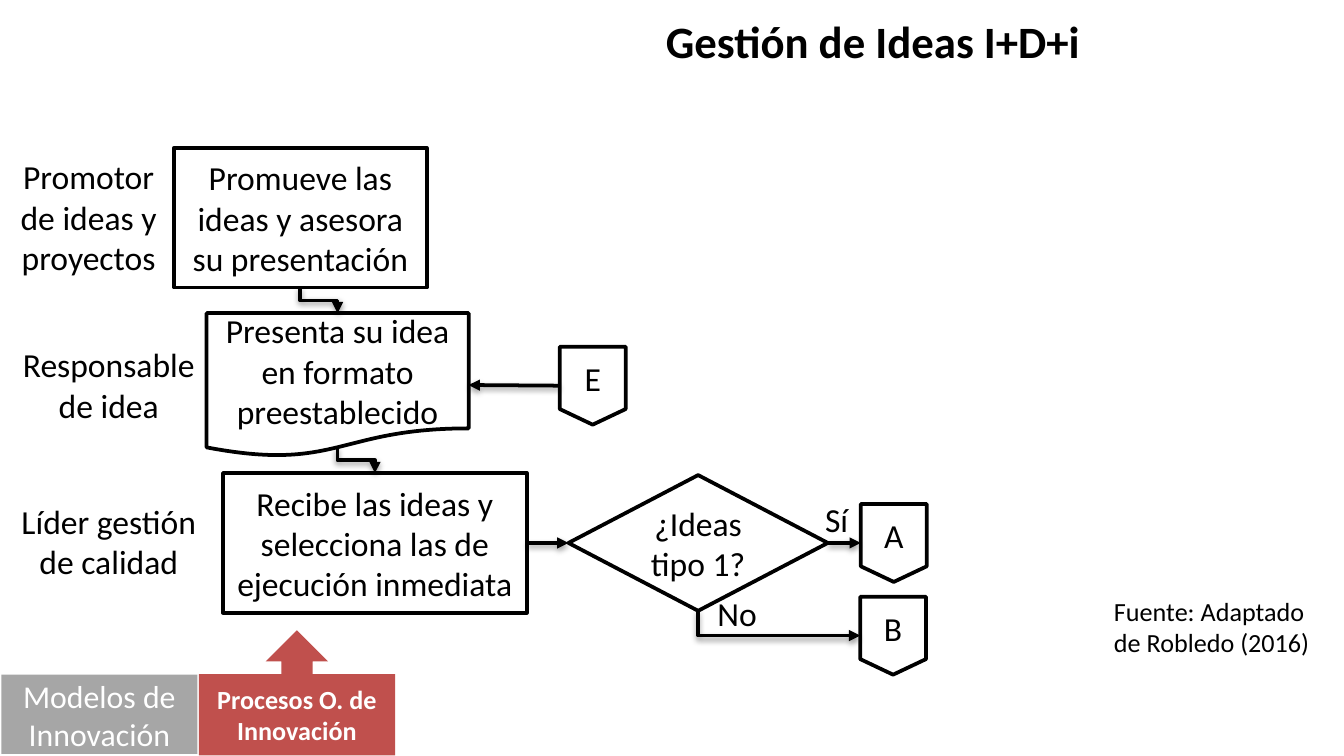
"""Build the flowchart slide on the management of R&D ideas."""
from dataclasses import dataclass
from typing import Optional

from lxml import etree
from pptx import Presentation
from pptx import util as u
from pptx.dml.color import RGBColor
from pptx.enum import shapes, text
from pptx.oxml import parse_xml
from pptx.oxml.ns import nsdecls, qn

FONT = "Calibri"
COLORS = {"ink": "000000", "paper": "FFFFFF", "gray": "A6A6A6", "red": "C0504D"}
WIDTH = u.Inches(10)
HEIGHT = WIDTH * 9 // 16
CELL = WIDTH // 100
TOP, LEFT, BOTTOM, RIGHT = range(4)
KIND = shapes.MSO_SHAPE
ALIGN = text.PP_ALIGN
SHADOW = (
    f'<a:effectLst {nsdecls("a")}><a:outerShdw blurRad="40000" dist="20000" dir="5400000" '
    'rotWithShape="0"><a:srgbClr val="000000"><a:alpha val="38000"/></a:srgbClr>'
    "</a:outerShdw></a:effectLst>"
)


@dataclass(frozen=True)
class Box:
    """A rectangle in grid columns and rows."""

    column: float
    row: float
    columns: float
    rows: float

    def lengths(self) -> tuple[int, ...]:
        return tuple(round(n * CELL) for n in (self.column, self.row, self.columns, self.rows))


@dataclass(frozen=True)
class Label:
    """A plain text box."""

    words: str
    box: Box
    size: int = 18
    align: ALIGN = ALIGN.CENTER
    wrap: bool = True


@dataclass(frozen=True)
class Node:
    """A filled shape with centred text."""

    words: str
    box: Box
    kind: KIND = KIND.RECTANGLE
    fill: str = "paper"
    ink: str = "ink"
    size: int = 18
    bold: bool = False
    outline: bool = True


@dataclass(frozen=True)
class Link:
    """An arrow between connection sites; preset names a downward elbow."""

    start: str
    end: str
    start_site: int = RIGHT
    end_site: int = LEFT
    preset: Optional[str] = None
    lift: float = 0


def page_mark(words: str, column: float, row: float) -> Node:
    """Describe an off-page connector."""
    return Node(words, Box(column, row, 4.9, 5.8), KIND.FLOWCHART_OFFPAGE_CONNECTOR)


LABELS = [
    Label("Fuente: Adaptado de Robledo (2016)", Box(81.9, 43.8, 18.2, 5.7), 14, ALIGN.LEFT),
    Label("Promotor de ideas y proyectos", Box(0.1, 11.13, 13, 10.1)),
    Label("Responsable de idea", Box(0.1, 25.13, 16, 7.1)),
    Label("Líder gestión de calidad", Box(0.1, 36.75, 16, 7.1)),
    Label("Sí", Box(60.4, 36.6, 3.8, 4), align=ALIGN.LEFT, wrap=False),
    Label("No", Box(52.4, 43.65, 5, 4), align=ALIGN.LEFT, wrap=False),
]
NODES = {
    "promote": Node("Promueve las ideas y asesora su presentación", Box(12.95, 11, 18.8, 10.4)),
    "present": Node("Presenta su idea en formato preestablecido",
                    Box(15.37, 23.3, 19.5, 10.7), KIND.FLOWCHART_DOCUMENT),
    "select": Node("Recibe las ideas y selecciona las de ejecución inmediata",
                   Box(16.6, 35.2, 22.6, 10.4)),
    "decide": Node("¿Ideas tipo 1?", Box(42.3, 35.35, 19.3, 10.1), KIND.FLOWCHART_DECISION),
    "A": page_mark("A", 64.05, 37.5),
    "B": page_mark("B", 64, 44.4),
    "E": page_mark("E", 41.65, 25.8),
    "models": Node("Modelos de Innovación", Box(0.1, 50.2, 14.6, 5.9),
                   fill="gray", ink="paper", size=17, outline=False),
    "processes": Node("Procesos O. de Innovación", Box(14.8, 46.9, 14.6, 9.3),
                      KIND.UP_ARROW_CALLOUT, "red", "paper", 14, True, False),
}
LINKS = [
    Link("promote", "present", BOTTOM, TOP, "bentConnector3"),
    Link("present", "select", BOTTOM, TOP, "bentConnector3", lift=0.7),
    Link("select", "decide"),
    Link("decide", "A"),
    Link("decide", "B", BOTTOM, LEFT, "bentConnector2"),
    Link("E", "present", LEFT, RIGHT),
]


def write(shape, words: str, size: int, ink: str = "ink", bold: bool = False,
          align: ALIGN = ALIGN.CENTER) -> None:
    """Put one formatted paragraph in a shape."""
    shape.text_frame.text = words
    paragraph = shape.text_frame.paragraphs[0]
    paragraph.alignment = align
    paragraph.font.name = FONT
    paragraph.font.size = u.Pt(size)
    paragraph.font.bold = bold
    paragraph.font.color.rgb = RGBColor.from_string(COLORS[ink])


def draw_title(slide, words: str, box: Box) -> None:
    """Place and format the title placeholder."""
    title = slide.shapes.title
    title.left, title.top, title.width, title.height = box.lengths()
    write(title, words, 24, bold=True)
    title.text_frame.vertical_anchor = text.MSO_ANCHOR.TOP
    title.text_frame.auto_size = text.MSO_AUTO_SIZE.SHAPE_TO_FIT_TEXT


def draw_label(slide, label: Label) -> None:
    """Draw a text box."""
    shape = slide.shapes.add_textbox(*label.box.lengths())
    write(shape, label.words, label.size, align=label.align)
    shape.text_frame.word_wrap = label.wrap
    shape.text_frame.auto_size = text.MSO_AUTO_SIZE.SHAPE_TO_FIT_TEXT


def draw_node(slide, node: Node):
    """Draw a filled shape and return it."""
    shape = slide.shapes.add_shape(node.kind, *node.box.lengths())
    shape.shadow.inherit = False
    shape.fill.solid()
    shape.fill.fore_color.rgb = RGBColor.from_string(COLORS[node.fill])
    if node.outline:
        shape.line.color.rgb = RGBColor.from_string(COLORS["ink"])
        shape.line.width = u.Pt(2)
    else:
        shape.line.fill.background()
    write(shape, node.words, node.size, node.ink, node.bold)
    shape.text_frame.vertical_anchor = text.MSO_ANCHOR.MIDDLE
    return shape


def bend_down(connector, preset: str, lift: int) -> None:
    """Turn an elbow so that it leaves its start downwards."""
    left, top = connector.begin_x, connector.begin_y - lift
    across, down = connector.end_x - left, connector.end_y - top
    connector.left = left + (across - down) // 2
    connector.top = top + (down - across) // 2
    connector.width, connector.height = down, across
    properties = connector._element.spPr
    frame = properties.find(qn("a:xfrm"))
    frame.set("rot", "16200000")
    frame.set("flipH", "1")
    properties.find(qn("a:prstGeom")).set("prst", preset)


def draw_link(slide, link: Link, drawn: dict) -> None:
    """Draw a shadowed arrow between two nodes."""
    kind = shapes.MSO_CONNECTOR.ELBOW if link.preset else shapes.MSO_CONNECTOR.STRAIGHT
    connector = slide.shapes.add_connector(kind, 0, 0, 0, 0)
    connector.begin_connect(drawn[link.start], link.start_site)
    connector.end_connect(drawn[link.end], link.end_site)
    if link.preset:
        bend_down(connector, link.preset, round(link.lift * CELL))
    connector.line.color.rgb = RGBColor.from_string(COLORS["ink"])
    connector.line.width = u.Pt(2)
    properties = connector._element.spPr
    etree.SubElement(properties.find(qn("a:ln")), qn("a:tailEnd"), type="triangle")
    properties.append(parse_xml(SHADOW))


def main() -> None:
    """Build and save the presentation."""
    presentation = Presentation()
    presentation.slide_width, presentation.slide_height = WIDTH, HEIGHT
    slide = presentation.slides.add_slide(presentation.slide_layouts[5])
    draw_title(slide, "Gestión de Ideas I+D+i", Box(29.9, 0.5, 70.1, 5))
    drawn = {name: draw_node(slide, node) for name, node in NODES.items()}
    for link in LINKS:
        draw_link(slide, link, drawn)
    for label in LABELS:
        draw_label(slide, label)
    presentation.save("out.pptx")


if __name__ == "__main__":
    main()
